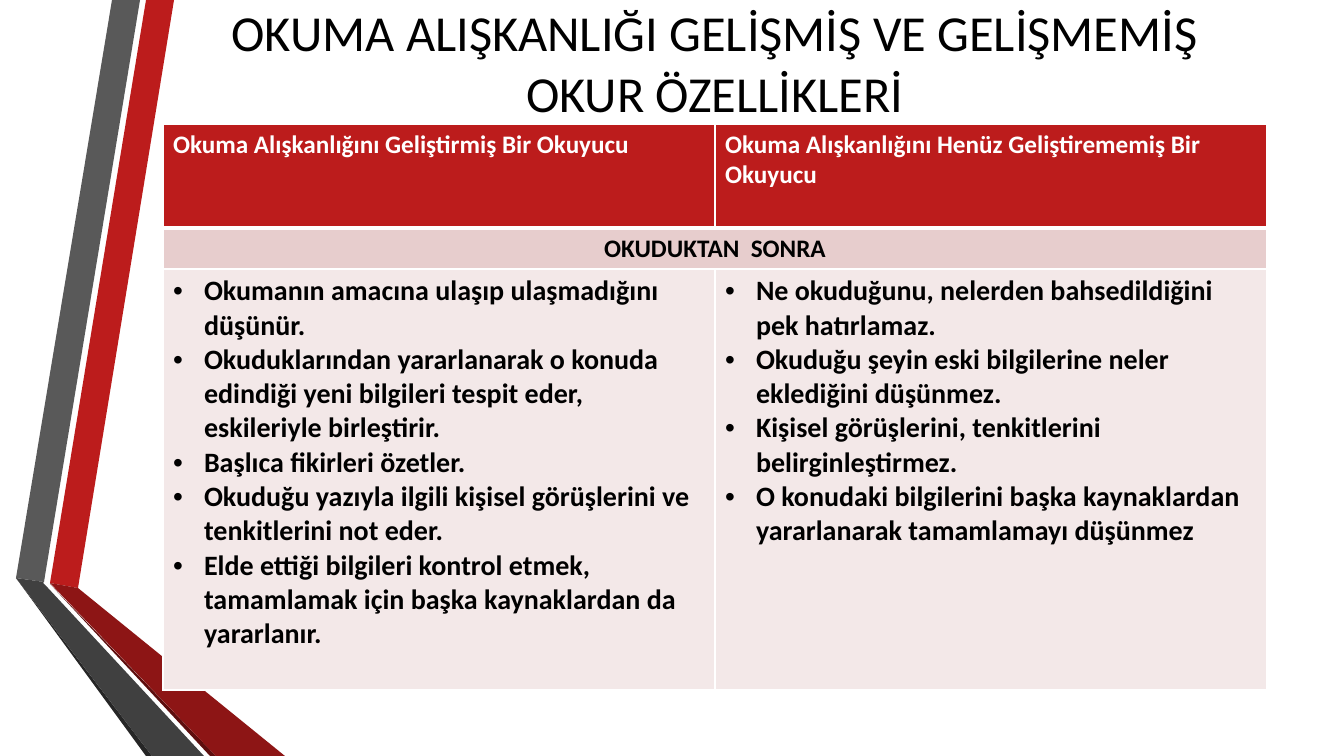
import pptx
import pptx.dml.color
import pptx.enum.text
import pptx.oxml
import pptx.oxml.ns
import pptx.util

PX = 914400 / 100.8
FONT = "Calibri"
COLORS = {
    "white": "FFFFFF", "black": "000000",
    "red": "BC1C1C", "red_fold": "8D1515", "red_edge": "5E0E0E",
    "gray": "595959", "gray_fold": "404040", "gray_edge": "262626",
    "banner": "E7CDCD", "body": "F3E8E8",
}

# Ribbon outlines in px, from back to front
RIBBONS = [
    ("red", [(50, 583), (78, 588), (174, 0), (146, 0)]),
    ("gray", [(140, 0), (112, 0), (16, 578), (44, 582)]),
    ("gray_edge", [(16, 578), (146, 756), (152, 756)]),
    ("red_edge", [(50, 584), (210, 756), (216, 756)]),
    ("red_fold", [(50, 583), (216, 756), (285, 756), (78, 588)]),
    ("gray_fold", [(16, 578), (152, 756), (204, 756), (48, 588), (43, 583), (44, 582)]),
]

TITLE = "OKUMA ALIŞKANLIĞI GELİŞMİŞ VE GELİŞMEMİŞ OKUR ÖZELLİKLERİ"
BANNER = "OKUDUKTAN  SONRA"
READERS = [
    ("Okuma Alışkanlığını Geliştirmiş Bir Okuyucu", [
        "Okumanın amacına ulaşıp ulaşmadığını düşünür.",
        "Okuduklarından yararlanarak o konuda edindiği yeni bilgileri tespit eder, "
        "eskileriyle birleştirir.",
        "Başlıca fikirleri özetler.",
        "Okuduğu yazıyla ilgili kişisel görüşlerini ve tenkitlerini not eder.",
        "Elde ettiği bilgileri kontrol etmek, tamamlamak için başka kaynaklardan da "
        "yararlanır.",
    ]),
    ("Okuma Alışkanlığını Henüz Geliştirememiş Bir Okuyucu", [
        "Ne okuduğunu, nelerden bahsedildiğini pek hatırlamaz.",
        "Okuduğu şeyin eski bilgilerine neler eklediğini düşünmez.",
        "Kişisel görüşlerini, tenkitlerini belirginleştirmez.",
        "O konudaki bilgilerini başka kaynaklardan yararlanarak tamamlamayı düşünmez",
    ]),
]
ROW_HEIGHTS = [104, 41, 421]
BULLET_INDENT = 31


def px(length):
    return pptx.util.Emu(round(length * PX))


def rgb(name):
    return pptx.dml.color.RGBColor.from_string(COLORS[name])


def format_para(para, size, color, bold=False, align=None):
    para.alignment = align
    for run in para.runs:
        run.font.name = FONT
        run.font.size = pptx.util.Pt(size)
        run.font.bold = bold
        run.font.color.rgb = rgb(color)


def add_bullet(para):
    properties = para._p.get_or_add_pPr()
    properties.set("marL", str(px(BULLET_INDENT)))
    properties.set("indent", str(-px(BULLET_INDENT)))
    namespace = pptx.oxml.ns.nsdecls("a")
    properties.append(pptx.oxml.parse_xml(f'<a:buFont {namespace} typeface="Arial"/>'))
    properties.append(pptx.oxml.parse_xml(f'<a:buChar {namespace} char="•"/>'))


def style_cell(cell, fill, top=1, bottom=1):
    properties = cell._tc.get_or_add_tcPr()
    for side, width in (("L", 1), ("R", 1), ("T", top), ("B", bottom)):
        properties.append(pptx.oxml.parse_xml(
            f'<a:ln{side} {pptx.oxml.ns.nsdecls("a")} w="{pptx.util.Pt(width)}">'
            f'<a:solidFill><a:srgbClr val="{COLORS["white"]}"/></a:solidFill></a:ln{side}>'))
    cell.fill.solid()
    cell.fill.fore_color.rgb = rgb(fill)


def draw_ribbons(page):
    for color, points in RIBBONS:
        builder = page.shapes.build_freeform(*points[0], scale=PX)
        builder.add_line_segments(points[1:], close=True)
        ribbon = builder.convert_to_shape()
        ribbon.shadow.inherit = False
        ribbon.fill.solid()
        ribbon.fill.fore_color.rgb = rgb(color)
        ribbon.line.fill.background()


def place_title(page, left, top, width, height):
    title = page.shapes.title
    title.left, title.top, title.width, title.height = map(px, (left, top, width, height))
    frame = title.text_frame
    frame.text = TITLE
    frame.word_wrap = True
    frame.auto_size = pptx.enum.text.MSO_AUTO_SIZE.NONE
    frame.vertical_anchor = pptx.enum.text.MSO_ANCHOR.MIDDLE
    format_para(frame.paragraphs[0], 36, "black", align=pptx.enum.text.PP_ALIGN.CENTER)


def place_table(page, left, top, width):
    box = map(px, (left, top, width, sum(ROW_HEIGHTS)))
    table = page.shapes.add_table(len(ROW_HEIGHTS), len(READERS), *box).table
    for row, height in zip(table.rows, ROW_HEIGHTS):
        row.height = px(height)

    # One column for each kind of reader
    for index, (heading, habits) in enumerate(READERS):
        table.columns[index].width = px(width / len(READERS))
        head, banner, body = (table.cell(row, index) for row in range(3))
        style_cell(head, "red", bottom=3)
        style_cell(banner, "banner", top=3)
        style_cell(body, "body")
        head.text_frame.text = heading
        format_para(head.text_frame.paragraphs[0], 18, "white", bold=True)
        body.text_frame.text = "\n".join(habits)
        for para in body.text_frame.paragraphs:
            format_para(para, 20, "black", bold=True)
            add_bullet(para)

    # Banner across both columns
    banner = table.cell(1, 0)
    banner.merge(table.cell(1, len(READERS) - 1))
    banner.text_frame.text = BANNER
    format_para(banner.text_frame.paragraphs[0], 18, "black", bold=True,
                align=pptx.enum.text.PP_ALIGN.CENTER)


def main():
    deck = pptx.Presentation()
    deck.slide_width, deck.slide_height = px(1344), px(756)
    page = deck.slides.add_slide(deck.slide_layouts.get_by_name("Title Only"))
    page.background.fill.solid()
    page.background.fill.fore_color.rgb = rgb("white")
    draw_ribbons(page)
    place_title(page, 163, 0, 1104, 124)
    place_table(page, 163, 124, 1104)
    deck.save("out.pptx")


if __name__ == "__main__":
    main()
